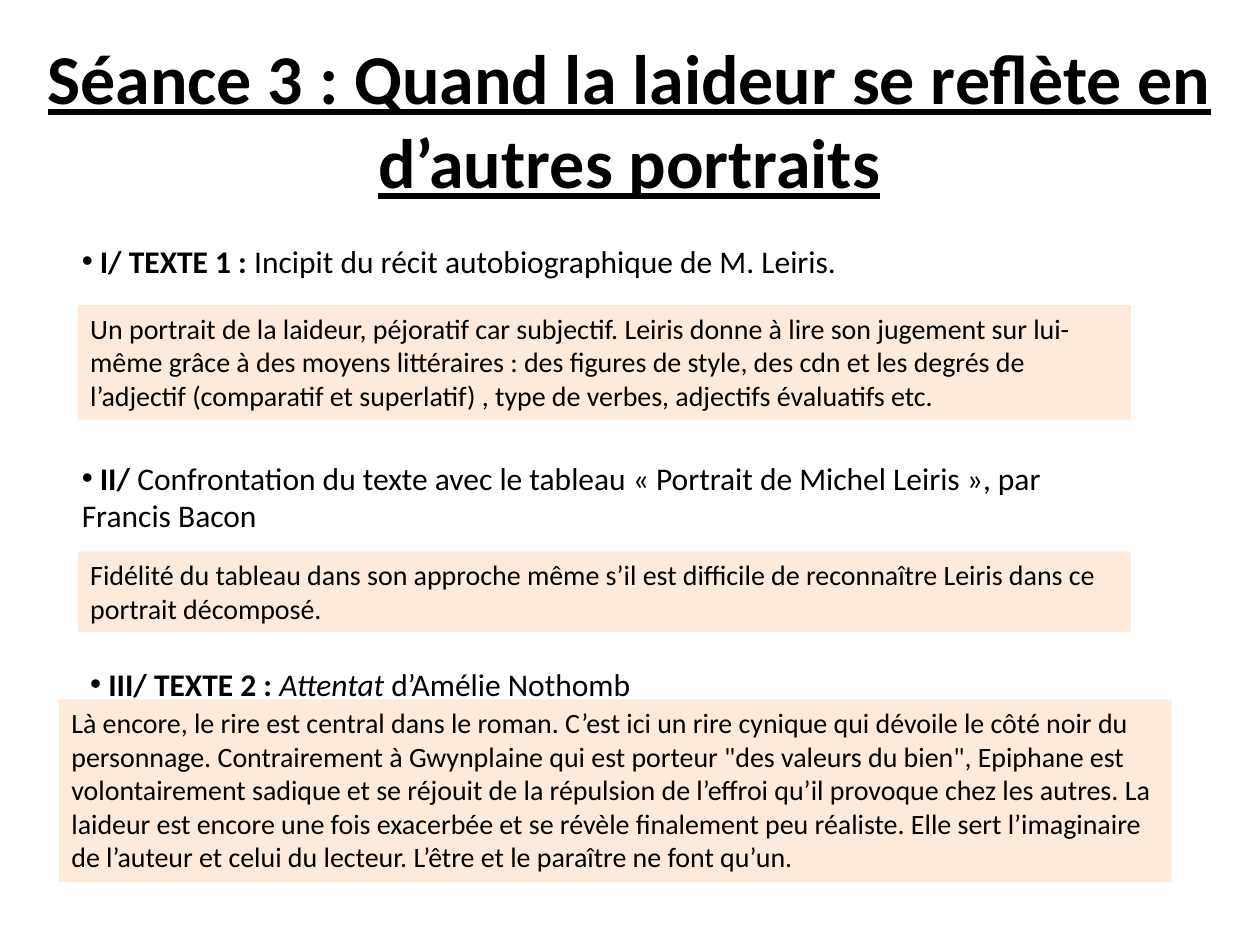
from dataclasses import dataclass

from lxml import etree
from pptx import Presentation
from pptx import util as u
from pptx.dml import color
from pptx.enum import shapes, text
from pptx.oxml import ns


@dataclass(frozen=True)
class Theme:
    """Colours, font and type sizes of the slide."""
    font: str = "Calibri"
    ink: color.RGBColor = color.RGBColor(0, 0, 0)
    note_fill: color.RGBColor = color.RGBColor(0xFD, 0xEA, 0xDA)
    title: u.Pt = u.Pt(40)
    heading: u.Pt = u.Pt(18)
    note: u.Pt = u.Pt(16)


THEME = Theme()

TITLE = "Séance 3 : Quand la laideur se reflète en d’autres portraits"

HEADINGS = [
    ((1.4, 4.75, 20.04, 1.8), True,
     [(" I/ TEXTE 1 : ", "bold"),
      ("Incipit du récit autobiographique de M. Leiris.", "plain")]),
    ((1.4, 9.12, 21.23, 1.8), True,
     [(" II/ ", "bold"),
      ("Confrontation du texte avec le tableau « Portrait de Michel Leiris », "
       "par Francis Bacon", "plain")]),
    ((1.57, 13.28, 11.53, 1.02), False,
     [(" III/ TEXTE 2 : ", "bold"), ("Attentat", "italic"),
      (" d’Amélie Nothomb", "plain")]),
]

NOTES = [
    ((1.57, 6.15, 21.23, 2.31),
     "Un portrait de la laideur, péjoratif car subjectif. Leiris donne à lire "
     "son jugement sur lui-même grâce à des moyens littéraires : des figures "
     "de style, des cdn et les degrés de l’adjectif (comparatif et superlatif) "
     ", type de verbes, adjectifs évaluatifs etc."),
    ((1.57, 11.12, 21.23, 1.62),
     "Fidélité du tableau dans son approche même s’il est difficile de "
     "reconnaître Leiris dans ce portrait décomposé."),
    ((1.19, 14.1, 22.43, 3.68),
     "Là encore, le rire est central dans le roman. C’est ici un rire cynique "
     "qui dévoile le côté noir du personnage. Contrairement à Gwynplaine qui "
     "est porteur \"des valeurs du bien\", Epiphane est volontairement sadique "
     "et se réjouit de la répulsion de l’effroi qu’il provoque chez les autres. "
     "La laideur est encore une fois exacerbée et se révèle finalement peu "
     "réaliste. Elle sert l’imaginaire de l’auteur et celui du lecteur. L’être "
     "et le paraître ne font qu’un."),
]


def place(box):
    """Turn a box in centimetres into lengths."""
    return [u.Cm(length) for length in box]


def style_text(holder, size, align=text.PP_ALIGN.LEFT, wrap=True):
    """Set frame and paragraph defaults and return the first paragraph."""
    frame = holder.text_frame
    frame.word_wrap = wrap
    frame.auto_size = text.MSO_AUTO_SIZE.SHAPE_TO_FIT_TEXT
    frame.vertical_anchor = text.MSO_ANCHOR.TOP
    paragraph = frame.paragraphs[0]
    paragraph.alignment = align
    paragraph.font.name = THEME.font
    paragraph.font.size = size
    paragraph.font.color.rgb = THEME.ink
    return paragraph


def add_title(slide, box, wording):
    """Add the bold, underlined session title."""
    title = slide.shapes.add_textbox(*place(box))
    paragraph = style_text(title, THEME.title, text.PP_ALIGN.CENTER)
    paragraph.font.bold = True
    paragraph.font.underline = True
    paragraph.add_run().text = wording


def add_heading(slide, box, wrap, parts):
    """Add a bulleted section heading made of styled parts."""
    heading = slide.shapes.add_textbox(*place(box))
    paragraph = style_text(heading, THEME.heading, wrap=wrap)
    for wording, style in parts:
        part = paragraph.add_run()
        part.text = wording
        part.font.bold = style == "bold"
        part.font.italic = style == "italic"
    properties = paragraph._p.get_or_add_pPr()
    bullet_font = etree.Element(ns.qn("a:buFont"), typeface="Arial")
    bullet = etree.Element(ns.qn("a:buChar"), char="•")
    properties.insert(0, bullet_font)
    properties.insert(1, bullet)


def add_note(slide, box, wording):
    """Add a tinted box with a commentary."""
    note = slide.shapes.add_shape(shapes.MSO_SHAPE.RECTANGLE, *place(box))
    note.shadow.inherit = False
    note.fill.solid()
    note.fill.fore_color.rgb = THEME.note_fill
    note.line.fill.background()
    style_text(note, THEME.note).add_run().text = wording


def main():
    """Build the slide and save it."""
    deck = Presentation()
    deck.slide_width, deck.slide_height = u.Cm(25.4), u.Cm(19.05)
    slide = deck.slides.add_slide(deck.slide_layouts[6])
    add_title(slide, (0.58, 0.58, 24.21, 3.68), TITLE)
    for heading, note in zip(HEADINGS, NOTES):
        add_heading(slide, *heading)
        add_note(slide, *note)
    deck.save("out.pptx")


if __name__ == "__main__":
    main()
